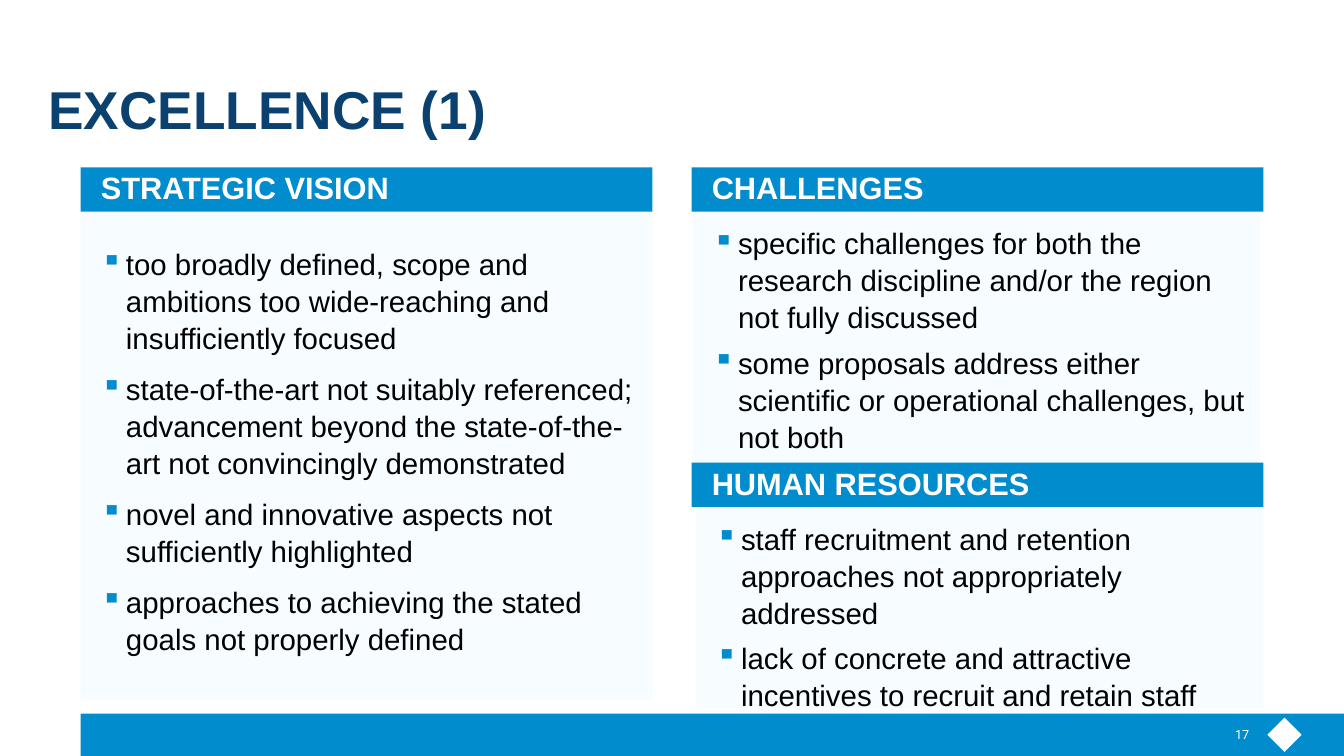
import pptx
import pptx.util
import pptx.dml.color
import pptx.enum.shapes
import pptx.enum.text
import pptx.oxml
import pptx.oxml.ns
import lxml.etree

Inches = pptx.util.Inches
Pt = pptx.util.Pt
RGBColor = pptx.dml.color.RGBColor
Shape = pptx.enum.shapes.MSO_SHAPE
Anchor = pptx.enum.text.MSO_ANCHOR
Align = pptx.enum.text.PP_ALIGN
qn = pptx.oxml.ns.qn

BLUE = RGBColor(0x00, 0x8C, 0xCD)
NAVY = RGBColor(0x0A, 0x41, 0x6E)
PALE = RGBColor(0xC2, 0xEC, 0xFF)
WHITE = RGBColor(0xFF, 0xFF, 0xFF)
BLACK = RGBColor(0x00, 0x00, 0x00)

deck = pptx.Presentation()
deck.slide_width = Inches(13.33)
deck.slide_height = Inches(7.5)
slide = deck.slides.add_slide(deck.slide_layouts[6])


def block(box, color, kind=Shape.RECTANGLE):
    """Add a filled shape without line or shadow; box is in inches."""
    shape = slide.shapes.add_shape(kind, *map(Inches, box))
    shape.shadow.inherit = False
    shape.fill.solid()
    shape.fill.fore_color.rgb = color
    shape.line.fill.background()
    return shape


def write(shape, lines, size, color, bold=False, face="Arial",
          inset=(0, 0, 0, 0), anchor=Anchor.MIDDLE, align=Align.LEFT):
    """Fill the shape with one paragraph per line and return its paragraphs."""
    frame = shape.text_frame
    frame.word_wrap = True
    frame.vertical_anchor = anchor
    (frame.margin_left, frame.margin_top,
     frame.margin_right, frame.margin_bottom) = map(Inches, inset)
    frame.text = "\n".join(lines)
    for para in frame.paragraphs:
        para.alignment = align
        para.font.name = face
        para.font.size = Pt(size)
        para.font.bold = bold
        para.font.color.rgb = color
    return frame.paragraphs


# Footer band with a plain mark and the page number
block((0.8, 7.08, 12.53, 0.42), BLUE)
block((12.57, 7.12, 0.34, 0.34), WHITE, Shape.DIAMOND)
page = slide.shapes.add_textbox(*map(Inches, (11.82, 7.21, 0.57, 0.15)))
write(page, ["17"], 9, WHITE, face="Roboto", align=Align.RIGHT)

# Title
title = slide.shapes.add_textbox(*map(Inches, (0.48, 0.85, 12.06, 0.54)))
head = write(title, ["EXCELLENCE (1)"], 38, NAVY, True, anchor=Anchor.BOTTOM)
head[0].line_spacing = 0.85

# Panels: heading, bar left and top, body box, top inset, gap, bullets
COLS = (0.8, 6.86)
BAR = (5.67, 0.44)
panels = [
    ("STRATEGIC VISION", COLS[0], 1.66, (0.8, 2.11, 5.67, 4.83), 0.31, 10, [
        "too broadly defined, scope and ambitions too wide-reaching and "
        "insufficiently focused",
        "state-of-the-art not suitably referenced; advancement beyond the "
        "state-of-the-art not convincingly demonstrated",
        "novel and innovative aspects not sufficiently highlighted",
        "approaches to achieving the stated goals not properly defined"]),
    ("CHALLENGES", COLS[1], 1.66, (6.87, 2.1, 5.63, 2.56), 0.12, 6, [
        "specific challenges for both the research discipline and/or the "
        "region not fully discussed",
        "some proposals address either scientific or operational "
        "challenges, but not both"]),
    ("HUMAN RESOURCES", COLS[1], 4.59, (6.9, 5.03, 5.63, 1.99), 0.12, 6, [
        "staff recruitment and retention approaches not appropriately "
        "addressed",
        "lack of concrete and attractive incentives to recruit and retain "
        "staff"]),
]

for name, left, top, box, inset, gap, points in panels:
    body = block(box, PALE)
    tint = body.fill._xPr.find(".//" + qn("a:srgbClr"))
    lxml.etree.SubElement(tint, qn("a:alpha")).set("val", "14000")
    paras = write(body, points, 21, BLACK, inset=(0.2, inset, 0, 0),
                  anchor=Anchor.TOP)
    for row, para in enumerate(paras):
        para.line_spacing = 1.05
        para.space_before = Pt(gap if row else 0)
        props = para._p.get_or_add_pPr()
        props.set("marL", str(Inches(0.25)))
        props.set("indent", str(-Inches(0.25)))
        dye = lxml.etree.Element(qn("a:buClr"))
        lxml.etree.SubElement(dye, qn("a:srgbClr")).set("val", str(BLUE))
        mark = lxml.etree.Element(qn("a:buChar"))
        mark.set("char", "▪")
        font = props.find(qn("a:defRPr"))
        font.addprevious(dye)
        font.addprevious(mark)

    bar = block((left, top, *BAR), BLUE)
    write(bar, [name], 22, WHITE, True, inset=(0.2, 0, 0, 0.04))

deck.save("out.pptx")
